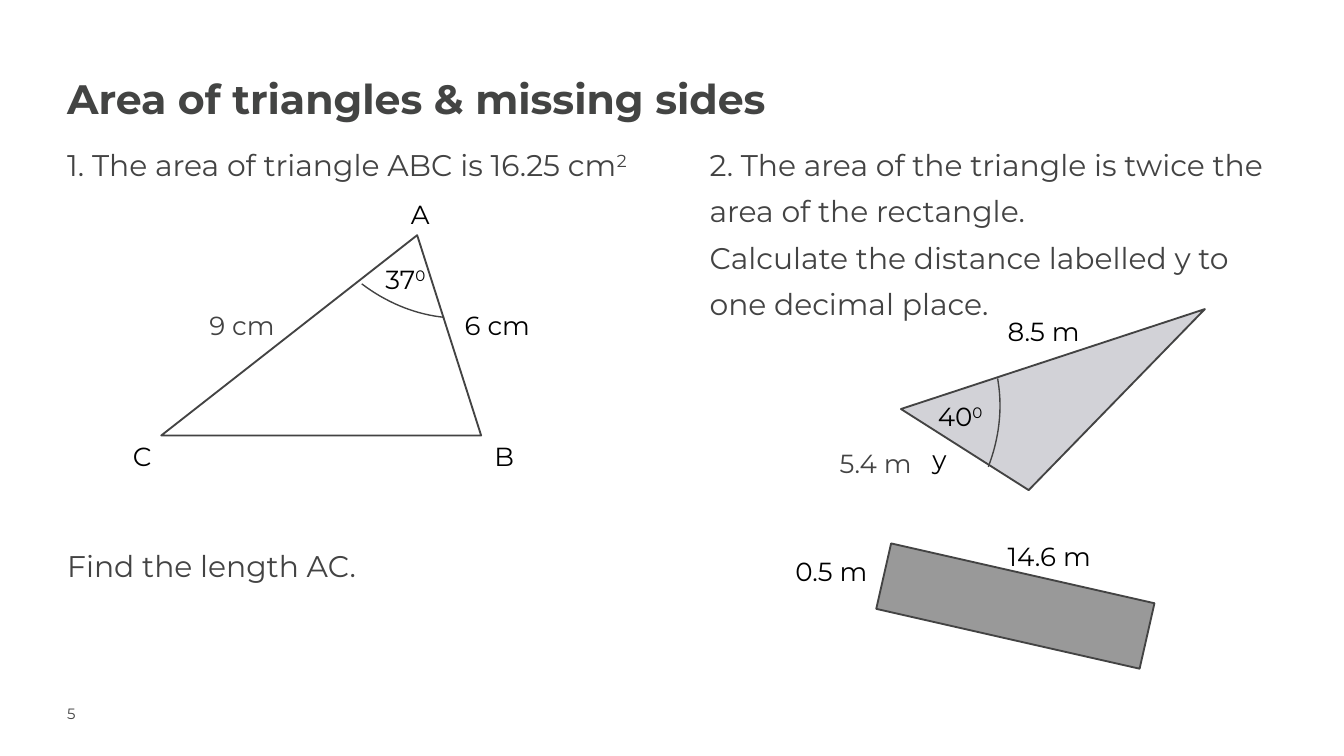
from dataclasses import dataclass

from lxml.etree import SubElement
from pptx import Presentation
from pptx.dml.color import RGBColor
from pptx.enum.shapes import MSO_SHAPE
from pptx.enum.text import MSO_ANCHOR, MSO_AUTO_SIZE, PP_ALIGN
from pptx.oxml.ns import qn
from pptx.util import Inches, Pt

FONT = "Montserrat"
GREY = "434343"
BLACK = "000000"


@dataclass
class Label:
    text: str
    left: float
    top: float
    color: str = BLACK
    power: str = ""
    width: float = 0.8


@dataclass
class Figure:
    kind: MSO_SHAPE
    box: tuple[float, float, float, float]
    turn: float = 0
    fill: str = ""
    adjust: tuple[float, ...] = ()
    line: float = 1


@dataclass
class Line:
    text: str
    power: str = ""
    before: float = 0


def paint(color: str) -> RGBColor:
    return RGBColor.from_string(color)


def place(shape, box: tuple[float, float, float, float]) -> None:
    shape.left, shape.top, shape.width, shape.height = map(Inches, box)


def add_run(para, text: str, size: float, color: str, bold=False, power=False) -> None:
    run = para.add_run()
    run.text = text
    font = run.font
    font.name, font.size, font.bold = FONT, Pt(size), bold
    font.color.rgb = paint(color)
    if power:
        run._r.get_or_add_rPr().set("baseline", "30000")


def set_frame(shape):
    frame = shape.text_frame
    frame.word_wrap = True
    frame.auto_size = MSO_AUTO_SIZE.NONE
    frame.vertical_anchor = MSO_ANCHOR.TOP
    frame.margin_left = frame.margin_right = 0
    frame.margin_top = frame.margin_bottom = 0
    return frame


def fill_body(holder, box: tuple[float, float, float, float], lines: list[Line]) -> None:
    place(holder, box)
    frame = set_frame(holder)
    for index, line in enumerate(lines):
        para = frame.add_paragraph() if index else frame.paragraphs[0]
        props = para._p.get_or_add_pPr()
        props.set("marL", "0")
        props.set("indent", "0")
        SubElement(props, qn("a:buNone"))
        para.line_spacing = 1.3
        para.space_before = Pt(line.before)
        add_run(para, line.text, 16, GREY)
        if line.power:
            add_run(para, line.power, 16, GREY, power=True)


def draw_label(shapes, label: Label) -> None:
    box = shapes.add_textbox(
        Inches(label.left), Inches(label.top), Inches(label.width), Inches(0.34)
    )
    frame = box.text_frame
    frame.word_wrap = True
    para = frame.paragraphs[0]
    add_run(para, label.text, 14, label.color)
    if label.power:
        add_run(para, label.power, 14, label.color, power=True)


def draw_figure(shapes, figure: Figure) -> None:
    shape = shapes.add_shape(figure.kind, *map(Inches, figure.box))
    shape.shadow.inherit = False
    shape.rotation = figure.turn
    for index, value in enumerate(figure.adjust):
        shape.adjustments[index] = value
    if figure.fill:
        shape.fill.solid()
        shape.fill.fore_color.rgb = paint(figure.fill)
    else:
        shape.fill.background()
    shape.line.color.rgb = paint(GREY)
    shape.line.width = Pt(figure.line)


def draw_all(shapes, items: list[Figure | Label]) -> None:
    for item in items:
        if isinstance(item, Figure):
            draw_figure(shapes, item)
        else:
            draw_label(shapes, item)


def make_arc(left: float, top: float, turn: float) -> Figure:
    return Figure(
        MSO_SHAPE.ARC, (left, top, 2.25, 2.61), turn, adjust=(177.05, 195.77), line=0.75
    )


FIRST = [
    Figure(MSO_SHAPE.ISOSCELES_TRIANGLE, (1.2, 1.75, 2.38, 1.49), 0, "FFFFFF", (0.8,)),
    make_arc(2.15, -0.21, 153.6),
    Label("37", 2.77, 1.91, power="0"),
    Label("A", 2.96, 1.43),
    Label("C", 0.89, 3.23),
    Label("B", 3.58, 3.23),
    Label("6 cm", 3.36, 2.25),
    Label("9 cm", 1.46, 2.25, GREY),
]
SECOND = [
    Figure(MSO_SHAPE.ISOSCELES_TRIANGLE, (6.78, 2.65, 2.38, 0.87), 161.8, "D2D2D7", (0.7,)),
    Label("8.5 m", 7.4, 2.3),
    Label("5.4 m", 6.15, 3.28, GREY),
    Label("40", 6.88, 2.93, power="0"),
    make_arc(5.09, 1.89, 47.5),
]
THIRD = [
    Label("y", 6.84, 3.25),
    Figure(MSO_SHAPE.RECTANGLE, (6.55, 4.26, 2.01, 0.5), 12.8, "999999"),
    Label("14.6 m", 7.4, 3.97, width=0.97),
    Label("0.5 m", 5.82, 4.08, width=0.97),
]


def main() -> None:
    deck = Presentation()
    deck.slide_width, deck.slide_height = Inches(10), Inches(10 * 9 / 16)
    slide = deck.slides.add_slide(deck.slide_layouts[3])
    title, left, right = slide.placeholders

    place(title, (0.5, 0.49, 7.37, 0.52))
    para = set_frame(title).paragraphs[0]
    para.alignment = PP_ALIGN.LEFT
    para.line_spacing = 1.15
    add_run(para, "Area of triangles & missing sides", 22, "434443", bold=True)

    fill_body(left, (0.5, 1.01, 4.26, 4.61), [
        Line("1. The area of triangle ABC is 16.25 cm", "2"),
        Line("Find the length AC.", before=190),
    ])
    fill_body(right, (5.28, 1.01, 4.17, 4.61), [
        Line("2. The area of the triangle is twice the area of the rectangle."),
        Line("Calculate the distance labelled y to one decimal place."),
    ])

    number = slide.shapes.add_textbox(0, 0, 0, 0)
    place(number, (0.5, 5.24, 0.79, 0.2))
    add_run(set_frame(number).paragraphs[0], "5", 8, GREY)

    draw_all(slide.shapes, FIRST)
    draw_all(slide.shapes.add_group_shape().shapes, SECOND)
    draw_all(slide.shapes, THIRD)
    deck.save("out.pptx")


if __name__ == "__main__":
    main()
